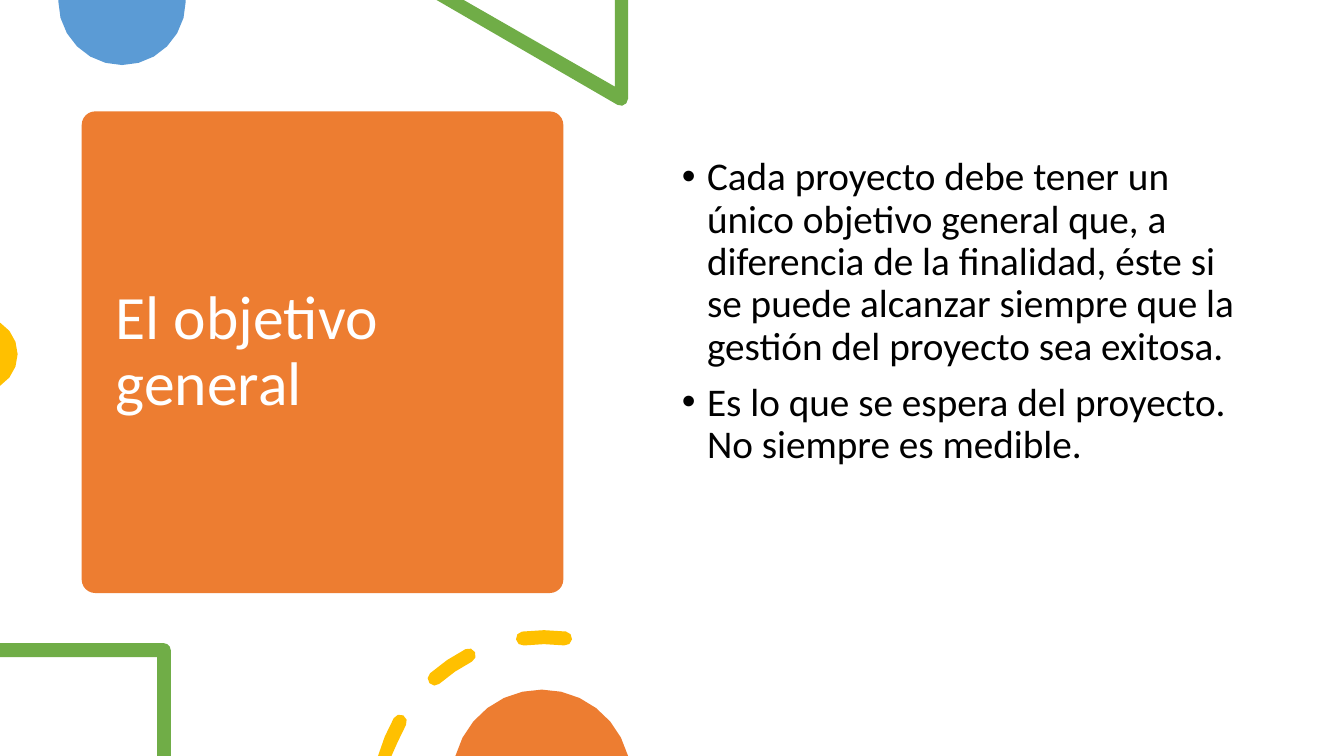
from math import cos, radians, sin

from lxml.etree import SubElement
from pptx import Presentation
from pptx.dml.color import RGBColor
from pptx.enum.shapes import MSO_SHAPE as Shape
from pptx.enum.text import MSO_ANCHOR as Anchor
from pptx.oxml.ns import qn
from pptx.util import Pt

WIDTH, HEIGHT = 960, 540
ORANGE, BLUE, GREEN, YELLOW = "ED7D31", "5B9BD5", "70AD47", "FFC000"
WHITE, BLACK = "FFFFFF", "000000"


def color(code):
    return RGBColor.from_string(code)


def arc(center, radius, start, end, steps):
    angles = [radians(start + (end - start) * i / steps) for i in range(steps + 1)]
    return [(center[0] + radius * cos(a), center[1] + radius * sin(a)) for a in angles]


def ring_dash(center, radius, thickness, start, end):
    half = thickness / 2
    start_center, end_center = arc(center, radius, start, end, 1)
    outline = (arc(center, radius + half, start, end, 2)
               + arc(end_center, half, end, end + 180, 4)[1:-1]
               + arc(center, radius - half, end, start, 2)
               + arc(start_center, half, start + 180, start + 360, 4)[1:-1])
    return [(x, min(y, HEIGHT)) for x, y in outline]


class SlideArtist:
    """Draws styled elements, measured in points, on one slide."""

    def __init__(self, slide, font="Calibri", line_spacing=0.9):
        self.shapes = slide.shapes
        self.font = font
        self.line_spacing = line_spacing

    def paint(self, shape, fill):
        shape.shadow.inherit = False
        shape.fill.solid()
        shape.fill.fore_color.rgb = color(fill)
        shape.line.fill.background()

    def panel(self, left, top, width, height, corner, fill):
        panel = self.shapes.add_shape(
            Shape.ROUNDED_RECTANGLE, Pt(left), Pt(top), Pt(width), Pt(height))
        panel.adjustments[0] = corner
        self.paint(panel, fill)

    def outline(self, contours, fill):
        contours = [[(Pt(x), Pt(y)) for x, y in contour] for contour in contours]
        builder = self.shapes.build_freeform(*contours[0][0])
        for index, contour in enumerate(contours):
            if index:
                builder.move_to(*contour[0])
            builder.add_line_segments(contour[1:], close=True)
        self.paint(builder.convert_to_shape(), fill)

    def text(self, left, top, width, height, lines, size, ink,
             anchor=Anchor.TOP, inset_top=3.6, bullet_indent=0, space_before=0):
        frame = self.shapes.add_textbox(
            Pt(left), Pt(top), Pt(width), Pt(height)).text_frame
        frame.word_wrap = True
        frame.vertical_anchor = anchor
        frame.margin_top = Pt(inset_top)
        frame.text = "\n".join(lines)
        for paragraph in frame.paragraphs:
            paragraph.line_spacing = self.line_spacing
            paragraph.space_before = Pt(space_before)
            if bullet_indent:
                self.bullet(paragraph, bullet_indent)
            for run in paragraph.runs:
                run.font.name = self.font
                run.font.size = Pt(size)
                run.font.color.rgb = color(ink)

    def bullet(self, paragraph, indent):
        properties = paragraph._p.get_or_add_pPr()
        properties.set("marL", str(Pt(indent)))
        properties.set("indent", str(-Pt(indent)))
        SubElement(properties, qn("a:buFont"), typeface="Arial")
        SubElement(properties, qn("a:buChar"), char="•")


def main():
    deck = Presentation()
    deck.slide_width, deck.slide_height = Pt(WIDTH), Pt(HEIGHT)
    artist = SlideArtist(deck.slides.add_slide(deck.slide_layouts[6]))

    artist.panel(58.4, 79.6, 344, 344, 0.028, ORANGE)
    artist.text(75.6, 87.8, 310.3, 328.3, ["El objetivo general"], 44, WHITE,
                anchor=Anchor.MIDDLE)

    top_disc = arc((87.2, 1), 45.5, 0, 180, 12)
    artist.outline([[(132.7, 0)] + top_disc + [(41.7, 0)]], BLUE)

    triangle_tip = arc((443.6, 70.6), 5, 0, 120, 3)
    artist.outline([[(448.6, 0)] + triangle_tip
                    + [(311.8, 0), (331.2, 0), (439.2, 61.9), (439.2, 0)]], GREEN)

    artist.outline([arc((-14, 253), 26.6, -58.2, 58.2, 6)], YELLOW)

    artist.text(480, 64.8, 414, 385.2, [
        "Cada proyecto debe tener un único objetivo general que, a diferencia de "
        "la finalidad, éste si se puede alcanzar siempre que la gestión del "
        "proyecto sea exitosa.",
        "Es lo que se espera del proyecto. No siempre es medible.",
    ], 28, BLACK, inset_top=47.2, bullet_indent=18, space_before=10)

    square_corner = arc((117, 464.4), 5, -90, 0, 3)
    artist.outline([[(0, 459.4)] + square_corner
                    + [(122, HEIGHT), (112.3, HEIGHT), (112.3, 469.4), (0, 469.4)]],
                   GREEN)

    dash_spans = [(195.7, 209.4), (228.6, 242.9), (262.6, 277.2)]
    artist.outline([ring_dash((388.8, 573.5), 118.4, 10, start, end)
                    for start, end in dash_spans], YELLOW)

    artist.outline([arc((387, 556.4), 63.8, 195, 345, 12)], ORANGE)

    deck.save("out.pptx")


if __name__ == "__main__":
    main()
